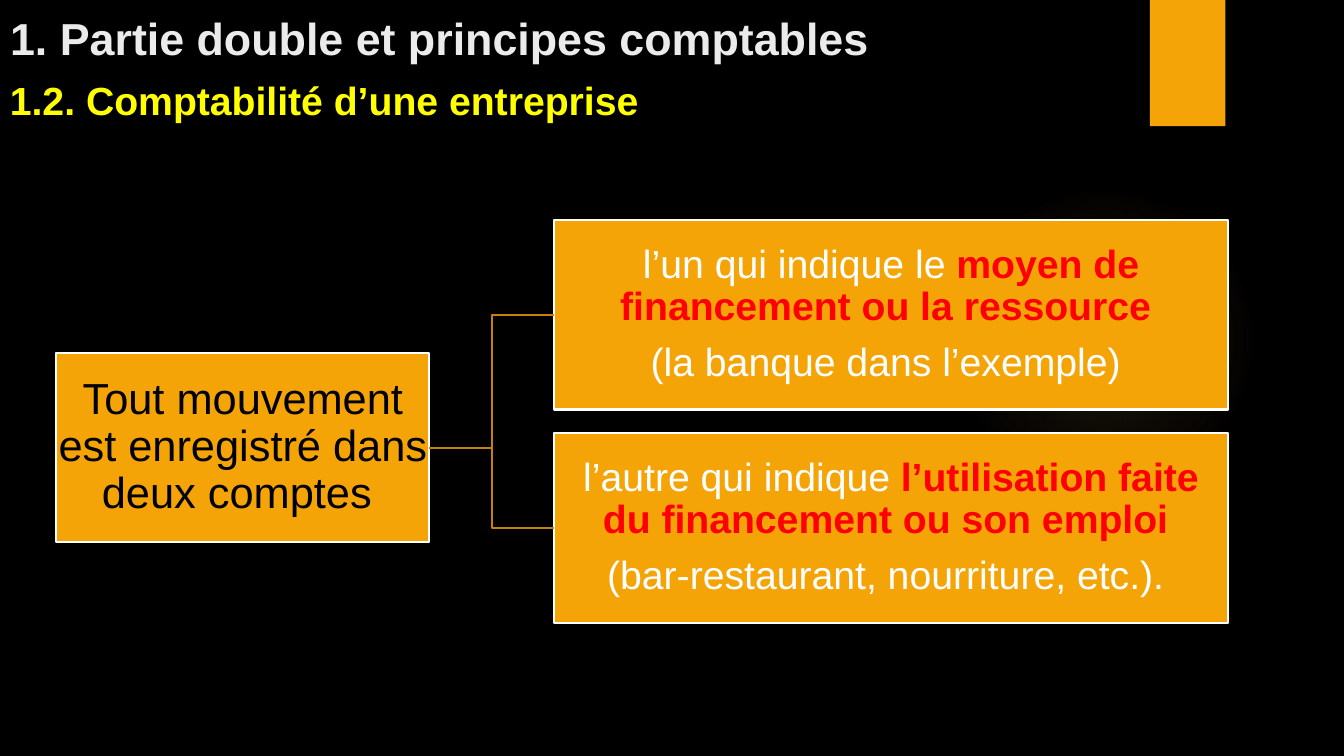
from lxml import etree
from pptx import Presentation
from pptx import util as u
from pptx.dml.color import RGBColor
from pptx.enum import shapes, text
from pptx.oxml import parse_xml
from pptx.oxml.ns import nsdecls, qn

COLOURS = {
    "background": "000000",
    "orange": "F5A408",
    "glow": "FAC96A",
    "link": "C48306",
    "title": "EBEBEB",
    "subtitle": "FFFF00",
    "white": "FFFFFF",
    "black": "000000",
    "emphasis": "FF0000",
}
FONT = "Arial"
BOX_HEIGHT = 4.78
BRANCHES = [
    [[("l’un qui indique le ", False),
      ("moyen de financement ou la ressource ", True)],
     [("(la banque dans l’exemple) ", False)]],
    [[("l’autre qui indique ", False),
      ("l’utilisation faite du financement ou son emploi ", True)],
     [("(bar-restaurant, nourriture, etc.). ", False)]],
]


def colour(name):
    return RGBColor.from_string(COLOURS[name])


def style_font(font, size, colour_name, bold=False):
    font.name = FONT
    font.size = u.Pt(size)
    font.bold = bold
    font.color.rgb = colour(colour_name)


def add_plain_shape(slide, kind, left, top, width, height):
    """Add an orange shape without shadow or outline; lengths in cm."""
    shape = slide.shapes.add_shape(
        kind, u.Cm(left), u.Cm(top), u.Cm(width), u.Cm(height))
    shape.shadow.inherit = False
    shape.fill.solid()
    shape.fill.fore_color.rgb = colour("orange")
    shape.line.fill.background()
    return shape


def add_glow(slide, left, top, size):
    """Add a round glow that fades out towards its edge."""
    glow = add_plain_shape(slide, shapes.MSO_SHAPE.OVAL, left, top, size, size)
    stops = "".join(
        f'<a:gs pos="{position}000"><a:srgbClr val="{COLOURS["glow"]}">'
        f'<a:alpha val="{alpha}000"/></a:srgbClr></a:gs>'
        for position, alpha in [(0, 7), (36, 6), (69, 0), (100, 0)])
    gradient = parse_xml(
        f'<a:gradFill {nsdecls("a")}><a:gsLst>{stops}</a:gsLst>'
        '<a:path path="circle"><a:fillToRect l="50000" t="50000" '
        'r="50000" b="50000"/></a:path></a:gradFill>')
    properties = glow._element.spPr
    properties.replace(properties.find(qn("a:solidFill")), gradient)


def add_decoration(slide):
    add_glow(slide, 23.9, 4.65, 7.82)
    add_plain_shape(slide, shapes.MSO_SHAPE.RECTANGLE, 28.98, 0, 1.9, 3.18)


def add_headings(slide, left, top, width):
    title = slide.shapes.title
    title.left, title.top = u.Cm(left), u.Cm(top)
    title.width, title.height = u.Cm(width), u.Cm(1.75)
    subtitle = slide.shapes.add_textbox(
        u.Cm(left), u.Cm(top + 1.8), u.Cm(18.9), u.Cm(1.45))
    headings = [
        (title, "1. Partie double et principes comptables", 32, "title",
         text.MSO_ANCHOR.BOTTOM),
        (subtitle, "1.2. Comptabilité d’une entreprise", 28, "subtitle",
         text.MSO_ANCHOR.TOP),
    ]
    for shape, wording, size, colour_name, anchor in headings:
        frame = shape.text_frame
        frame.word_wrap = True
        frame.auto_size = text.MSO_AUTO_SIZE.NONE
        frame.vertical_anchor = anchor
        frame.text = wording
        paragraph = frame.paragraphs[0]
        paragraph.alignment = text.PP_ALIGN.LEFT
        style_font(paragraph.font, size, colour_name, True)


def add_box(slide, left, top, width, paragraphs, size, colour_name):
    """Add an outlined box; paragraphs are lists of (wording, emphasised)."""
    box = add_plain_shape(slide, shapes.MSO_SHAPE.RECTANGLE,
                          left, top, width, BOX_HEIGHT)
    box.line.color.rgb = colour("white")
    box.line.width = u.Pt(1.5)
    frame = box.text_frame
    frame.word_wrap = True
    frame.vertical_anchor = text.MSO_ANCHOR.MIDDLE
    frame.margin_left = frame.margin_right = u.Cm(0.05)
    frame.margin_top = frame.margin_bottom = u.Cm(0.05)
    for index, runs in enumerate(paragraphs):
        paragraph = frame.add_paragraph() if index else frame.paragraphs[0]
        paragraph.alignment = text.PP_ALIGN.CENTER
        paragraph.line_spacing = 0.9
        if index:
            paragraph.space_before = u.Pt(10)
        style_font(paragraph.font, size, colour_name)
        for wording, emphasised in runs:
            run = paragraph.add_run()
            run.text = wording
            if emphasised:
                run.font.bold = True
                run.font.color.rgb = colour("emphasis")
    return box


def link_boxes(slide, start, end):
    link = slide.shapes.add_connector(shapes.MSO_CONNECTOR.ELBOW, 0, 0, 0, 0)
    link.begin_connect(start, 3)
    link.end_connect(end, 1)
    link.line.color.rgb = colour("link")
    link.line.width = u.Pt(1.5)
    etree.SubElement(link._element.spPr, qn("a:effectLst"))


def add_tree(slide, left, top):
    """Add the root box and its branches, from the tree's top left corner."""
    root = add_box(slide, left, top + 3.35, 9.4,
                   [[("Tout mouvement est enregistré dans deux comptes ", False)]],
                   31, "black")
    for index, paragraphs in enumerate(BRANCHES):
        branch = add_box(slide, left + 12.55, top + index * (BOX_HEIGHT + 0.59),
                         16.97, paragraphs, 28, "white")
        link_boxes(slide, root, branch)


def main():
    presentation = Presentation()
    presentation.slide_width = u.Cm(33.87)
    presentation.slide_height = u.Cm(19.05)
    slide = presentation.slides.add_slide(presentation.slide_layouts[5])
    slide.background.fill.solid()
    slide.background.fill.fore_color.rgb = colour("background")
    add_decoration(slide)
    add_headings(slide, 0, 0, 28.5)
    add_tree(slide, 1.42, 5.54)
    presentation.save("out.pptx")


if __name__ == "__main__":
    main()
